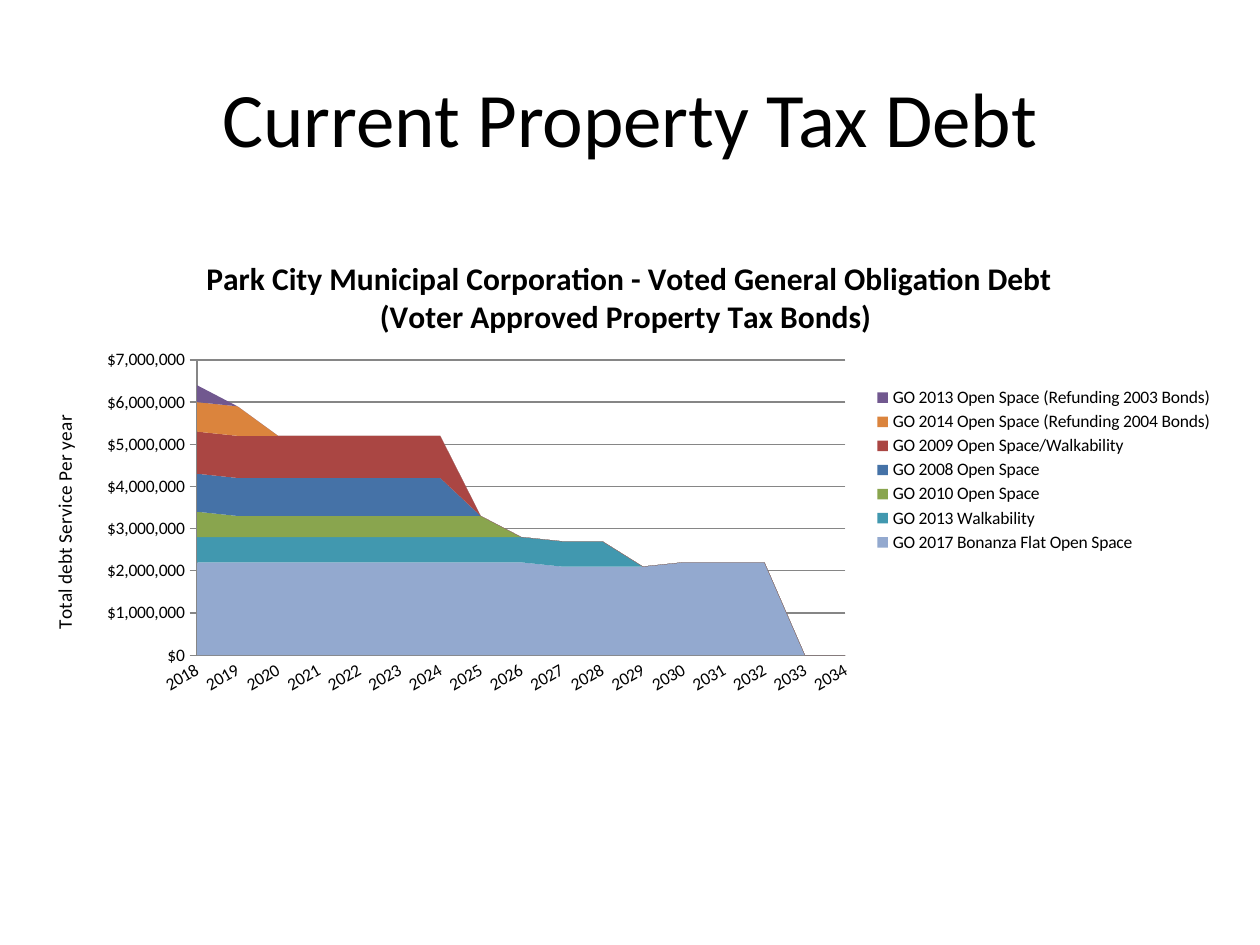
from typing import NamedTuple

import lxml.etree
import pptx
import pptx.chart.data
import pptx.dml.color
import pptx.enum.chart
import pptx.enum.text
import pptx.oxml
import pptx.oxml.ns
import pptx.util

Inches = pptx.util.Inches
qn = pptx.oxml.ns.qn
FONT = "Calibri"
GRID = "868686"
YEARS = range(2018, 2035)


class Bond(NamedTuple):
    name: str
    color: str
    millions: list[float]  # yearly debt service from 2018 on


class Box(NamedTuple):
    x: float
    y: float
    w: float
    h: float


BONDS = [
    Bond("GO 2017 Bonanza Flat Open Space", "93A9CF", [2.2] * 9 + [2.1] * 3 + [2.2] * 3),
    Bond("GO 2013 Walkability", "4198AF", [0.6] * 11),
    Bond("GO 2010 Open Space", "89A54E", [0.6] + [0.5] * 7),
    Bond("GO 2008 Open Space", "4572A7", [0.9] * 7),
    Bond("GO 2009 Open Space/Walkability", "AA4643", [1.0] * 7),
    Bond("GO 2014 Open Space (Refunding 2004 Bonds)", "DB843D", [0.7] * 2),
    Bond("GO 2013 Open Space (Refunding 2003 Bonds)", "71588F", [0.4]),
]


def rgb(value: str) -> pptx.dml.color.RGBColor:
    return pptx.dml.color.RGBColor.from_string(value)


def style_font(font, size: float, bold: bool = False) -> None:
    font.name = FONT
    font.size = pptx.util.Pt(size)
    font.bold = bold
    font.color.rgb = rgb("000000")


def set_heading(owner, text: str, size: float, bold: bool = False) -> None:
    frame = owner.text_frame
    frame.text = text
    for paragraph in frame.paragraphs:
        style_font(paragraph.font, size, bold)


def set_line(line) -> None:
    line.color.rgb = rgb(GRID)
    line.width = pptx.util.Pt(0.75)


def place(element, box: Box, inner: bool = False) -> None:
    """Give a chart part a manual layout, in fractions of the chart."""
    for old in element.findall(qn("c:layout")):
        element.remove(old)
    layout = lxml.etree.Element(qn("c:layout"))
    manual = lxml.etree.SubElement(layout, qn("c:manualLayout"))
    settings = [("layoutTarget", "inner")] if inner else []
    settings += [("xMode", "edge"), ("yMode", "edge")]
    settings += list(box._asdict().items())
    for tag, value in settings:
        lxml.etree.SubElement(manual, qn(f"c:{tag}")).set("val", str(value))
    position = element.find(qn("c:legendPos"))
    if position is None:
        element.insert(0, layout)
    else:
        position.addnext(layout)


def add_debt_chart(slide) -> None:
    data = pptx.chart.data.CategoryChartData(number_format='"$"#,##0')
    data.categories = [str(year) for year in YEARS]
    for bond in BONDS:
        values = [round(amount * 1_000_000) for amount in bond.millions]
        data.add_series(bond.name, values + [None] * (len(YEARS) - len(values)))
    chart = slide.shapes.add_chart(
        pptx.enum.chart.XL_CHART_TYPE.AREA_STACKED,
        Inches(0.23), Inches(1.89), Inches(9.53), Inches(3.72), data,
    ).chart
    style_font(chart.font, 10)
    for series, bond in zip(chart.plots[0].series, BONDS):
        series.format.fill.solid()
        series.format.fill.fore_color.rgb = rgb(bond.color)
        series.format.line.fill.background()

    # Headings
    chart.has_title = True
    set_heading(
        chart.chart_title,
        "Park City Municipal Corporation - Voted General Obligation Debt\n"
        "(Voter Approved Property Tax Bonds) ",
        18, bold=True,
    )
    dollars, years = chart.value_axis, chart.category_axis
    set_heading(dollars.axis_title, "Total debt Service Per year", 11)

    # Axes
    tick = pptx.enum.chart.XL_TICK_MARK
    dollars.minimum_scale, dollars.maximum_scale = 0, 7_000_000
    dollars.major_unit = 1_000_000
    dollars.major_tick_mark = tick.OUTSIDE
    dollars.minor_tick_mark = tick.NONE
    dollars.tick_labels.number_format = '"$"#,##0'
    dollars.tick_labels.number_format_is_linked = False
    dollars.has_major_gridlines = True
    years.has_major_gridlines = False
    years.major_tick_mark = years.minor_tick_mark = tick.NONE
    for line in (dollars.major_gridlines.format.line, dollars.format.line, years.format.line):
        set_line(line)
    for axis in (dollars, years):
        style_font(axis.tick_labels.font, 10)

    # Slanted years, areas from the axis edge, blanks as zero
    chart_space = chart.element
    for tag, attribute, value in (
        ("c:catAx/c:txPr/a:bodyPr", "rot", "-1800000"),
        ("c:valAx/c:crossBetween", "val", "midCat"),
        ("c:dispBlanksAs", "val", "zero"),
    ):
        for element in chart_space.xpath(f".//{tag}"):
            element.set(attribute, value)

    # Legend and plot area
    chart.has_legend = True
    chart.legend.position = pptx.enum.chart.XL_LEGEND_POSITION.RIGHT
    chart.legend.include_in_layout = False
    style_font(chart.legend.font, 10)
    place(chart_space.find(f".//{qn('c:legend')}"), Box(0.7, 0.31, 0.29, 0.37))
    place(chart_space.find(f".//{qn('c:plotArea')}"), Box(0.14, 0.26, 0.54, 0.63), inner=True)


def main() -> None:
    deck = pptx.Presentation()
    deck.slide_width, deck.slide_height = Inches(10), Inches(7.5)
    slide = deck.slides.add_slide(deck.slide_layouts[5])

    # Slide title
    title = slide.shapes.title
    title.left, title.top = Inches(0.5), Inches(0.3)
    title.width, title.height = Inches(9), Inches(1.25)
    set_heading(title, "Current Property Tax Debt", 44)
    title.text_frame.vertical_anchor = pptx.enum.text.MSO_ANCHOR.MIDDLE
    title.text_frame.paragraphs[0].alignment = pptx.enum.text.PP_ALIGN.CENTER

    add_debt_chart(slide)
    deck.save("out.pptx")


if __name__ == "__main__":
    main()
